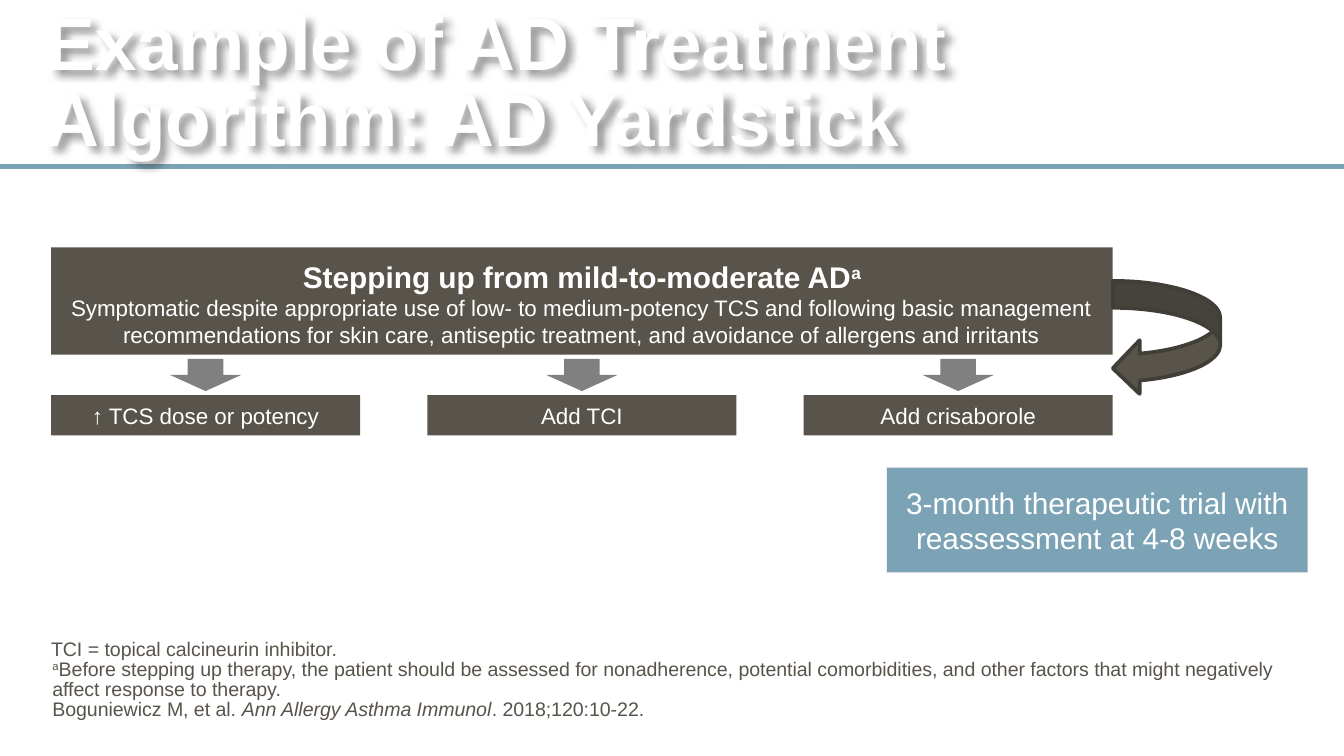
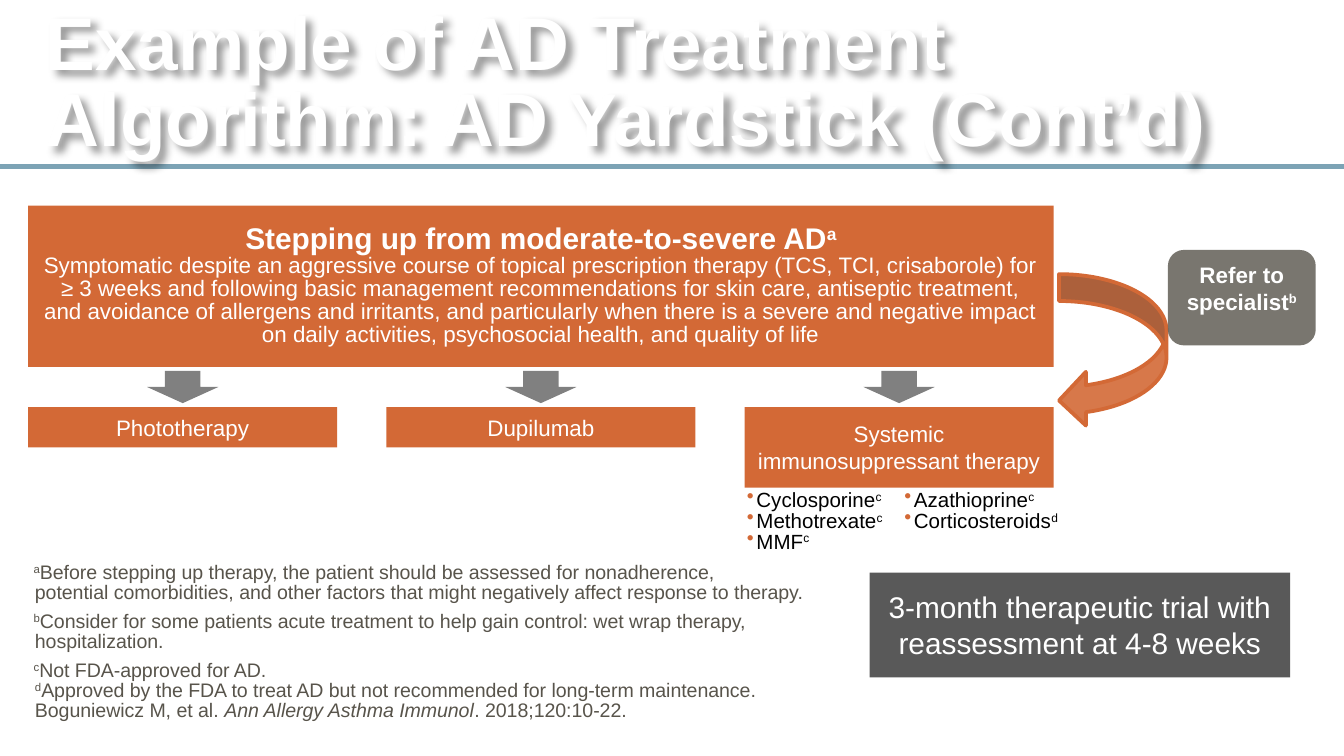
"""Build two slides on stepping up atopic dermatitis treatment."""
from dataclasses import dataclass

from lxml.etree import SubElement
from pptx import Presentation
from pptx.dml.color import RGBColor
from pptx.enum.shapes import MSO_CONNECTOR as Connector, MSO_SHAPE as Shape
from pptx.enum.text import MSO_ANCHOR as Anchor, MSO_AUTO_SIZE as AutoSize, PP_ALIGN as Align
from pptx.oxml.ns import qn
from pptx.util import Inches, Pt


@dataclass(frozen=True)
class Theme:
    font: str = "Arial"
    white: str = "FFFFFF"
    black: str = "000000"
    blue: str = "7CA3B5"
    brown: str = "58544B"
    brown_edge: str = "413E37"
    orange: str = "D36936"
    orange_light: str = "D7784A"
    gray: str = "808080"
    charcoal: str = "595959"
    title_size: float = 40
    heading_size: float = 16
    label_size: float = 12
    list_size: float = 11
    note_size: float = 10.5
    tight: float = 0.85


THEME = Theme()
OPTION_WIDTH = 2.3
TITLE = "Example of AD Treatment Algorithm: AD Yardstick"
CITATION = "Boguniewicz M, et al. *Ann Allergy Asthma Immunol*. 2018;120:10-22."
ASSESSMENT = "^a^Before stepping up therapy, the patient should be assessed for nonadherence, "
TRIAL = "3-month therapeutic trial with reassessment at 4-8 weeks"


def write(paragraph, text, size=THEME.label_size, color=THEME.white, bold=False,
          align=Align.CENTER, spacing=None, before=0, hang=0, bullet=None):
    """Fill a paragraph; ^ toggles superscript, * italics, a newline breaks the line."""
    properties = paragraph._p.get_or_add_pPr()
    properties.set("marL", str(Inches(hang)))
    properties.set("indent", str(Inches(-hang)))
    paragraph.alignment = align
    paragraph.space_before = Pt(before)
    if spacing:
        paragraph.line_spacing = spacing
    if bullet:
        tint = SubElement(properties, qn("a:buClr"))
        SubElement(tint, qn("a:srgbClr"), val=bullet)
        SubElement(properties, qn("a:buChar"), char="•")
    else:
        SubElement(properties, qn("a:buNone"))
    for raised, part in enumerate(text.split("^")):
        for slanted, piece in enumerate(part.split("*")):
            for number, line in enumerate(piece.split("\n")):
                if number:
                    paragraph.add_line_break()
                if not line:
                    continue
                run = paragraph.add_run()
                run.text = line
                font = run.font
                font.name, font.size, font.bold = THEME.font, Pt(size), bold
                font.italic = slanted % 2 == 1
                font.color.rgb = RGBColor.from_string(color)
                if raised % 2:
                    font._element.set("baseline", "30000")
    for line_break in paragraph._p.findall(qn("a:br")):
        SubElement(line_break, qn("a:rPr"), sz=str(int(size * 100)))


class Deck:
    """Hold the theme, the presentation and the current slide."""

    def __init__(self, theme):
        self.theme = theme
        self.presentation = Presentation()
        self.presentation.slide_width = Inches(10)
        self.presentation.slide_height = Inches(10) * 9 // 16
        self.slide = None

    def start(self):
        """Add a slide with the band under its title."""
        self.slide = self.presentation.slides.add_slide(self.presentation.slide_layouts[1])
        band = self.slide.shapes.add_connector(
            Connector.STRAIGHT, 0, Inches(1.24), Inches(10), Inches(1.24))
        band.line.color.rgb = RGBColor.from_string(self.theme.blue)
        band.line.width = Pt(3)
        SubElement(band._element.spPr, qn("a:effectLst"))

    def fill_frame(self, frame, paragraphs, anchor, insets=(0.1, 0.05, 0.1, 0.05)):
        """Lay out a text frame from pairs of text and format."""
        frame.word_wrap = True
        frame.auto_size = AutoSize.NONE
        frame.vertical_anchor = anchor
        (frame.margin_left, frame.margin_top,
         frame.margin_right, frame.margin_bottom) = map(Inches, insets)
        for number, (text, style) in enumerate(paragraphs):
            write(frame.add_paragraph() if number else frame.paragraphs[0], text, **style)

    def placeholder(self, holder, box, paragraphs, anchor, insets):
        """Move a placeholder to the front and fill it."""
        holder.left, holder.top, holder.width, holder.height = map(Inches, box)
        self.slide.shapes.element.append(holder.element)
        self.fill_frame(holder.text_frame, paragraphs, anchor, insets)

    def title(self, text, box):
        """Set the slide title with its soft shadow."""
        style = dict(size=self.theme.title_size, bold=True, align=Align.LEFT,
                     spacing=self.theme.tight)
        heading = self.slide.shapes.title
        self.placeholder(heading, box, [(text, style)], Anchor.MIDDLE, (0, 0.05, 0.1, 0.05))
        effects = SubElement(heading.element.spPr, qn("a:effectLst"))
        shadow = SubElement(effects, qn("a:outerShdw"), blurRad=str(Pt(4)), dist=str(Pt(4)),
                            dir="2700000", algn="tl", rotWithShape="0")
        tint = SubElement(shadow, qn("a:srgbClr"), val=self.theme.black)
        SubElement(tint, qn("a:alpha"), val="40000")

    def footnotes(self, notes, box):
        """Set the notes at the foot of the slide."""
        style = dict(size=self.theme.note_size, color=self.theme.brown, align=Align.LEFT,
                     spacing=self.theme.tight, hang=0.01)
        paragraphs = [(note, dict(style, before=5 if number else 0))
                      for number, note in enumerate(notes)]
        self.placeholder(self.slide.placeholders[1], box, paragraphs,
                         Anchor.BOTTOM, (0.38, 0, 0, 0.25))

    def shape(self, kind, box, fill, paragraphs=(), anchor=Anchor.MIDDLE, edge=None, alpha=None):
        """Add a filled preset shape."""
        figure = self.slide.shapes.add_shape(kind, *map(Inches, box))
        figure.shadow.inherit = False
        figure.fill.solid()
        figure.fill.fore_color.rgb = RGBColor.from_string(fill)
        if alpha:
            tint = figure._element.spPr.find(f"{qn('a:solidFill')}/{qn('a:srgbClr')}")
            SubElement(tint, qn("a:alpha"), val=str(alpha * 1000))
        if edge:
            figure.line.color.rgb = RGBColor.from_string(edge)
            figure.line.width = Pt(2)
        else:
            figure.line.fill.background()
        if paragraphs:
            self.fill_frame(figure.text_frame, paragraphs, anchor)

    def pathway(self, box, fill, heading, criteria, options, anchor, spacing=None):
        """Add a step-up box with arrows down to evenly spaced options."""
        left, top, width, height = box
        self.shape(Shape.RECTANGLE, box, fill, [
            (heading, dict(size=self.theme.heading_size, bold=True, spacing=spacing)),
            (criteria, dict(spacing=spacing))], anchor)
        pitch = (width - OPTION_WIDTH) / (len(options) - 1)
        option_top = top + height + 0.3
        for column, (option, option_height) in enumerate(options):
            option_left = left + column * pitch
            self.shape(Shape.DOWN_ARROW, (option_left + (OPTION_WIDTH - 0.53) / 2,
                                          option_top - 0.27, 0.53, 0.24), self.theme.gray)
            self.shape(Shape.RECTANGLE, (option_left, option_top, OPTION_WIDTH, option_height),
                       fill, [(option, {})])

    def trial(self, left, top, fill):
        """Add the box on the length of the trial."""
        self.shape(Shape.RECTANGLE, (left, top, 3.13, 0.78), fill,
                   [(TRIAL, dict(size=self.theme.heading_size))])

    def drug_list(self, drugs, box):
        """Add a bulleted list that flows over two columns."""
        frame = self.slide.shapes.add_textbox(*map(Inches, box)).text_frame
        style = dict(size=self.theme.list_size, color=self.theme.black, align=Align.LEFT,
                     spacing=self.theme.tight, hang=0.07, bullet=self.theme.orange)
        self.fill_frame(frame, [(drug, style) for drug in drugs], Anchor.TOP,
                        (0.1, 0.05, 0.1, 0.32))
        frame._txBody.bodyPr.set("numCol", "2")


def mild_to_moderate(deck):
    """Build the slide on mild-to-moderate disease."""
    theme = deck.theme
    deck.start()
    deck.pathway(
        (0.38, 1.84, 7.9, 0.8), theme.brown, "Stepping up from mild-to-moderate AD^a^",
        "Symptomatic despite appropriate use of low- to medium-potency TCS and following "
        "basic management recommendations for skin care, antiseptic treatment, and "
        "avoidance of allergens and irritants",
        [("↑ TCS dose or potency", 0.3), ("Add TCI", 0.3), ("Add crisaborole", 0.3)],
        Anchor.BOTTOM)
    deck.shape(Shape.CURVED_LEFT_ARROW, (8.28, 2.09, 0.8, 0.85), theme.brown,
               edge=theme.brown_edge)
    deck.title(TITLE, (0.34, 0.01, 8.17, 1.25))
    deck.footnotes(
        ["TCI = topical calcineurin inhibitor.\n" + ASSESSMENT + "potential comorbidities, "
         "and other factors that might negatively affect response to therapy.\n" + CITATION],
        (0, 4.76, 9.81, 0.85))
    deck.trial(6.6, 3.48, theme.blue)


def moderate_to_severe(deck):
    """Build the slide on moderate-to-severe disease."""
    theme = deck.theme
    deck.start()
    deck.pathway(
        (0.21, 1.53, 7.63, 1.2), theme.orange, "Stepping up from moderate-to-severe AD^a^",
        "Symptomatic despite an aggressive course of topical prescription therapy (TCS, TCI, "
        "crisaborole) for ≥ 3 weeks and following basic management recommendations for skin "
        "care, antiseptic treatment, and avoidance of allergens and irritants, and "
        "particularly when there is a severe and negative impact on daily activities, "
        "psychosocial health, and quality of life",
        [("Phototherapy", 0.3), ("Dupilumab", 0.3), ("Systemic immunosuppressant therapy", 0.6)],
        Anchor.MIDDLE, theme.tight)
    deck.drug_list(["Cyclosporine^c^", "Methotrexate^c^", "MMF^c^", "Azathioprine^c^",
                    "Corticosteroids^d^"], (5.46, 3.6, 2.54, 0.89))
    deck.shape(Shape.CURVED_LEFT_ARROW, (7.88, 2.04, 0.8, 1.14), theme.orange_light,
               edge=theme.orange)
    deck.shape(Shape.ROUNDED_RECTANGLE, (8.69, 1.86, 1.1, 0.71), theme.brown,
               [("Refer to specialist^b^", dict(bold=True))], Anchor.TOP, alpha=80)
    deck.trial(6.47, 4.26, theme.charcoal)
    deck.title(TITLE + " (Cont’d)", (0.34, -0.27, 9.03, 1.82))
    deck.footnotes(
        [ASSESSMENT + "\npotential comorbidities, and other factors that might negatively "
         "affect response to therapy.",
         "^b^Consider for some patients acute treatment to help gain control: wet wrap "
         "therapy, \nhospitalization.",
         "^c^Not FDA-approved for AD.\n^d^Approved by the FDA to treat AD but not "
         "recommended for long-term maintenance.\n" + CITATION],
        (-0.13, 4.18, 10, 1.44))


def main():
    """Build and save the presentation."""
    deck = Deck(THEME)
    mild_to_moderate(deck)
    moderate_to_severe(deck)
    deck.presentation.save("out.pptx")


if __name__ == "__main__":
    main()
